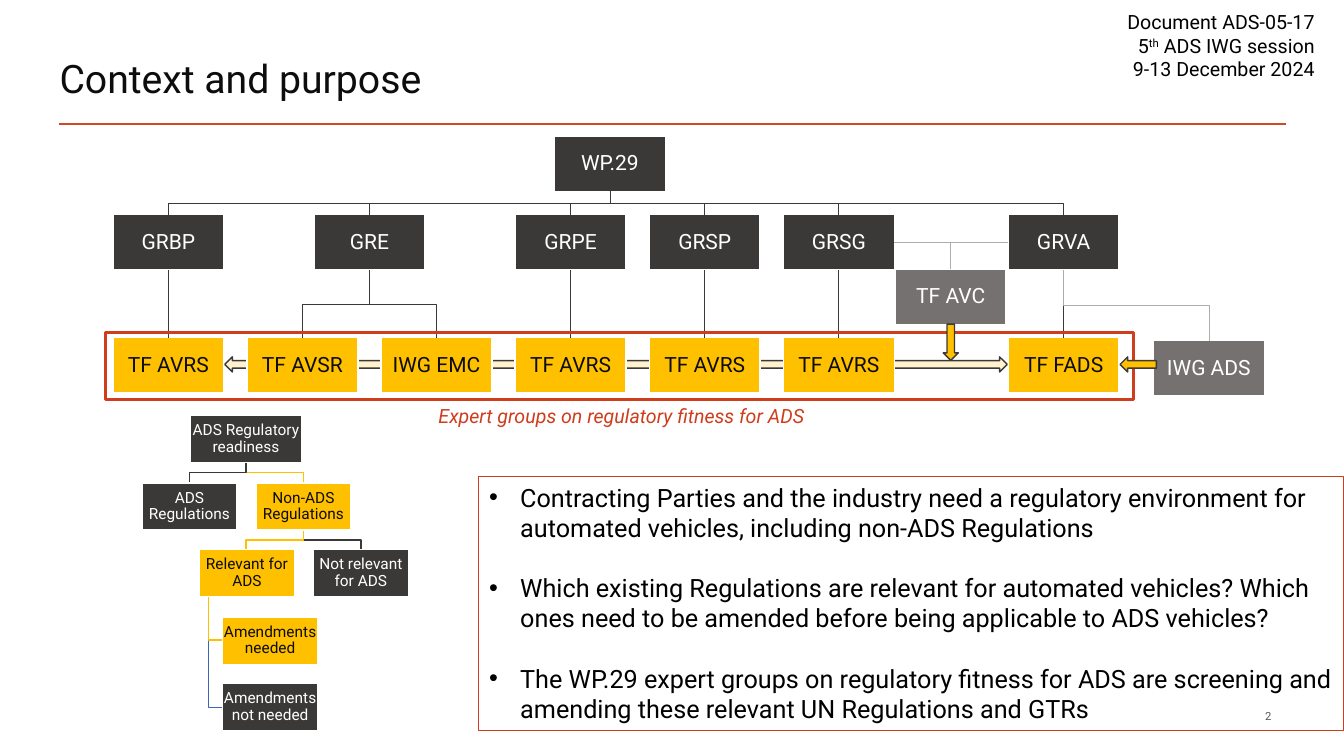
"""Build the slide on context and purpose of the expert groups."""
from dataclasses import dataclass

from lxml import etree
from pptx import Presentation
from pptx import util as u
from pptx.dml.color import RGBColor
from pptx.enum import shapes, text
from pptx.oxml.ns import qn


@dataclass(frozen=True)
class Theme:
    font: str = "Roboto"
    dark: str = "3B3838"
    yellow: str = "FFC000"
    cream: str = "FFF2CC"
    grey: str = "767171"
    pale: str = "AFABAB"
    blue: str = "3E67B2"
    rule: str = "D24726"
    red: str = "CF3D1C"
    white: str = "FFFFFF"
    black: str = "000000"
    ink: str = "0D0D0D"
    muted: str = "595959"
    title: float = 28
    body: float = 18
    box: float = 15
    caption: float = 14
    node: float = 11
    number: float = 8


def apply(target, formats):
    for name, value in formats.items():
        setattr(target, name, value)


class SlideBuilder:
    def __init__(self, presentation, theme):
        self.theme = theme
        self.slide = presentation.slides.add_slide(presentation.slide_layouts[1])

    def place(self, shape, left, top, width, height):
        apply(shape, dict(left=u.Inches(left), top=u.Inches(top),
                          width=u.Inches(width), height=u.Inches(height)))

    def stroke(self, shape, color, width):
        shape.line.color.rgb = RGBColor.from_string(color)
        shape.line.width = u.Pt(width)

    def fill_text(self, shape, paragraphs, size, color, paragraph_format, frame_format, italic=None):
        frame = shape.text_frame
        apply(frame, dict(word_wrap=True, auto_size=text.MSO_AUTO_SIZE.NONE) | frame_format)
        frame.text = "\n".join(paragraphs)
        for paragraph in frame.paragraphs:
            apply(paragraph, paragraph_format)
            for run in paragraph.runs:
                apply(run.font, dict(name=self.theme.font, size=u.Pt(size), italic=italic))
                run.font.color.rgb = RGBColor.from_string(color)
        return frame

    def title(self, wording, *area):
        shape = self.slide.shapes.title
        self.place(shape, *area)
        self.fill_text(shape, [wording], self.theme.title, self.theme.ink,
                       dict(alignment=text.PP_ALIGN.LEFT),
                       dict(vertical_anchor=text.MSO_ANCHOR.MIDDLE))

    def bullets(self, items, *area):
        shape = self.slide.placeholders[1]
        self.place(shape, *area)
        self.stroke(shape, self.theme.red, 0.75)
        frame = self.fill_text(shape, items, self.theme.body, self.theme.black,
                               dict(space_before=u.Pt(0), space_after=u.Pt(21.5)),
                               dict(vertical_anchor=text.MSO_ANCHOR.TOP))
        for paragraph in frame.paragraphs:
            properties = paragraph._p.get_or_add_pPr()
            properties.set("marL", str(u.Inches(0.31)))
            properties.set("indent", str(-u.Inches(0.31)))

    def label(self, paragraphs, area, size, color, alignment, italic=None, **frame_format):
        shape = self.slide.shapes.add_textbox(*map(u.Inches, area))
        return self.fill_text(shape, paragraphs, size, color, dict(alignment=alignment),
                              frame_format, italic)

    def shape(self, kind, area, fill, line, width, rotation=0):
        shape = self.slide.shapes.add_shape(kind, *map(u.Inches, area))
        shape.shadow.inherit = False
        shape.rotation = rotation
        if fill:
            shape.fill.solid()
            shape.fill.fore_color.rgb = RGBColor.from_string(fill)
        else:
            shape.fill.background()
        self.stroke(shape, line, width)
        return shape

    def box(self, wording, left, top, fill, size=Theme.box, width=1.1, height=0.55):
        shape = self.shape(shapes.MSO_SHAPE.RECTANGLE, (left, top, width, height),
                           fill, self.theme.white, 1)
        margins = dict.fromkeys(("margin_left", "margin_top", "margin_right", "margin_bottom"),
                                u.Inches(0.01))
        self.fill_text(shape, [wording], size,
                       self.theme.ink if fill == self.theme.yellow else self.theme.white,
                       dict(alignment=text.PP_ALIGN.CENTER, line_spacing=0.9),
                       dict(vertical_anchor=text.MSO_ANCHOR.MIDDLE) | margins)
        return shape

    def connector(self, kind, ends, color, width):
        connector = self.slide.shapes.add_connector(kind, *map(u.Emu, map(int, ends)))
        self.stroke(connector, color, width)
        etree.SubElement(connector._element.spPr, qn("a:effectLst"))
        return connector

    def straight(self, ends, color, width=0.5, start=None, finish=None):
        connector = self.connector(shapes.MSO_CONNECTOR.STRAIGHT, map(u.Inches, ends), color, width)
        if start:
            connector.begin_connect(*start)
        if finish:
            connector.end_connect(*finish)

    def branch(self, parent, child, color):
        x1, y1 = parent.left + parent.width / 2, parent.top + parent.height
        x2, y2 = child.left + child.width / 2, child.top
        if abs(x2 - x1) < u.Inches(0.02):
            self.straight((0, 0, 0, 0), color, start=(parent, 2), finish=(child, 0))
            return
        center_x, center_y = (x1 + x2) / 2, (y1 + y2) / 2
        half_width, half_height = (y2 - y1) / 2, abs(x2 - x1) / 2
        side = 1 if x2 < x1 else -1
        connector = self.connector(
            shapes.MSO_CONNECTOR.ELBOW,
            (center_x - side * half_width, center_y - half_height,
             center_x + side * half_width, center_y + half_height), color, 0.5)
        connector._element.spPr.find(qn("a:xfrm")).set("rot", str((180 - 90 * side) * 60000))

    def polyline(self, points, color):
        (x, y), *others = [(u.Inches(x), u.Inches(y)) for x, y in points]
        builder = self.slide.shapes.build_freeform(x, y)
        builder.add_line_segments(others, close=False)
        shape = builder.convert_to_shape()
        shape.shadow.inherit = False
        shape.fill.background()
        self.stroke(shape, color, 1)


def draw_groups(page, theme):
    kinds = shapes.MSO_SHAPE
    page.shape(kinds.LEFT_RIGHT_ARROW, (2.23, 3.54, 7.76, 0.15), theme.cream, theme.dark, 1)
    columns = [1.12 + 1.33 * index for index in range(6)] + [10]
    groups = [("GRBP", {"TF AVRS": 0}), ("GRE", {"TF AVSR": 1, "IWG EMC": 2}),
              ("GRPE", {"TF AVRS": 3}), ("GRSP", {"TF AVRS": 4}),
              ("GRSG", {"TF AVRS": 5}), ("GRVA", {"TF FADS": 6})]
    forum = page.box("WP.29", 5.5, 1.35, theme.dark)
    parties = {}
    for name, tasks in groups:
        left = sum(columns[column] for column in tasks.values()) / len(tasks)
        parties[name] = page.box(name, left, 2.13, theme.dark)
        page.branch(forum, parties[name], theme.dark)
        for task, column in tasks.items():
            page.branch(parties[name], page.box(task, columns[column], 3.35, theme.yellow),
                        theme.dark)
    page.branch(parties["GRVA"], page.box("IWG ADS", 11.44, 3.38, theme.grey), theme.pale)
    page.straight((8.87, 2.4, 10, 2.4), theme.pale,
                  start=(parties["GRSG"], 3), finish=(parties["GRVA"], 1))
    shared = page.box("TF AVC", 8.88, 2.67, theme.grey)
    page.straight((9.43, 2.4, 9.43, 2.67), theme.pale, finish=(shared, 0))
    page.shape(kinds.RECTANGLE, (1.05, 3.3, 10.19, 0.66), None, theme.red, 2.25)
    for left, top, rotation in ((9.25, 3.32, 270), (11.11, 3.54, 0)):
        page.shape(kinds.LEFT_ARROW, (left, top, 0.36, 0.15), theme.yellow, theme.dark, 1, rotation)
    page.label(["Expert groups on regulatory fitness for ADS"], (4.2, 3.96, 3.93, 0.34),
               theme.caption, theme.red, text.PP_ALIGN.CENTER, italic=True)


def draw_readiness(page, theme):
    for x1, x2, top, color in ((3.01, 3.58, 5.26, theme.dark), (3.01, 2.44, 5.26, theme.yellow),
                               (2.44, 3.01, 4.59, theme.yellow), (2.44, 1.88, 4.59, theme.dark)):
        page.polyline([(x1, top), (x1, top + 0.1), (x2, top + 0.1), (x2, top + 0.2)], color)
    for bottom, color in ((7.02, theme.blue), (6.35, theme.yellow)):
        page.polyline([(2.07, 5.92), (2.07, bottom), (2.21, bottom)], color)
    nodes = [("ADS Regulatory readiness", 1.89, 4.12, theme.dark, 1.1),
             ("ADS Regulations", 1.41, 4.79, theme.dark, 0.94),
             ("Non-ADS Regulations", 2.54, 4.79, theme.yellow, 0.94),
             ("Relevant for ADS", 1.98, 5.45, theme.yellow, 0.94),
             ("Not relevant for ADS", 3.11, 5.45, theme.dark, 0.94),
             ("Amendments needed", 2.21, 6.12, theme.yellow, 0.94),
             ("Amendments not needed", 2.21, 6.78, theme.dark, 0.94)]
    for wording, left, top, fill, width in nodes:
        page.box(wording, left, top, fill, theme.node, width, 0.47)


def main():
    theme = Theme()
    presentation = Presentation()
    apply(presentation, dict(slide_width=u.Inches(13.33), slide_height=u.Inches(7.5)))
    page = SlideBuilder(presentation, theme)
    page.straight((0.59, 1.23, 12.75, 1.23), theme.rule, 2)
    header = page.label(["Document ADS-05-17", "5", "9-13 December 2024"],
                        (11.03, 0.05, 2.11, 0.81), theme.caption, theme.black,
                        text.PP_ALIGN.RIGHT, word_wrap=False)
    for wording, baseline in (("th", 30000), (" ADS IWG session", 0)):
        run = header.paragraphs[1].add_run()
        run.text = wording
        apply(run.font, dict(name=theme.font, size=u.Pt(theme.caption)))
        run.font.color.rgb = RGBColor.from_string(theme.black)
        run.font._element.set("baseline", str(baseline))
    page.title("Context and purpose", 0.49, 0.47, 12.26, 0.61)
    draw_readiness(page, theme)
    page.bullets(["Contracting Parties and the industry need a regulatory environment for automated vehicles, including non-ADS Regulations",
                  "Which existing Regulations are relevant for automated vehicles? Which ones need to be amended before being applicable to ADS vehicles?",
                  "The WP.29 expert groups on regulatory fitness for ADS are screening and amending these relevant UN Regulations and GTRs"],
                 4.75, 4.73, 8.58, 2.52)
    page.label(["2"], (9.13, 7.03, 3.58, 0.15), theme.number, theme.muted,
               text.PP_ALIGN.RIGHT, vertical_anchor=text.MSO_ANCHOR.MIDDLE)
    draw_groups(page, theme)
    presentation.save("out.pptx")


if __name__ == "__main__":
    main()
